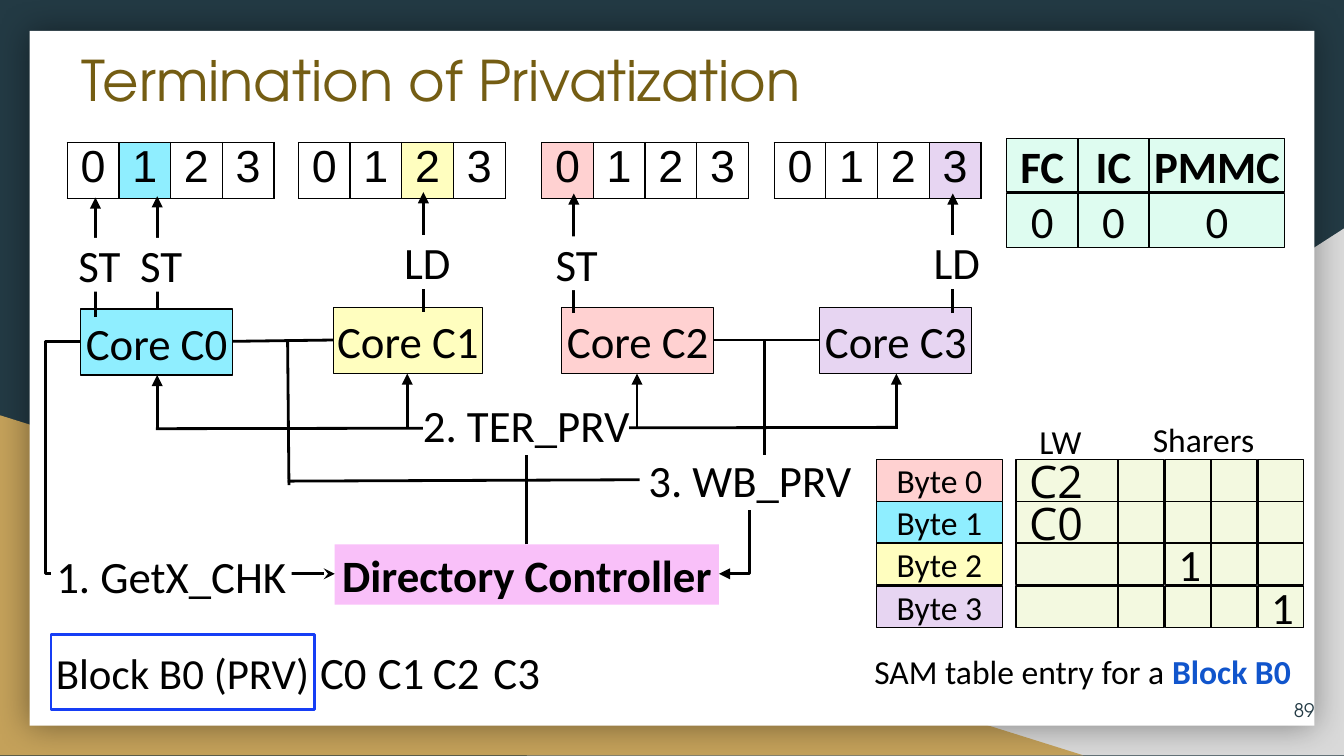
from dataclasses import dataclass

from lxml import etree
from pptx import Presentation
from pptx import util as u
from pptx.dml.color import RGBColor
from pptx.enum import shapes, text
from pptx.oxml.ns import qn


@dataclass(frozen=True)
class Theme:
    background: str = "233A44"
    gray: str = "D9D9D9"
    gold: str = "C4A15A"
    white: str = "FFFFFF"
    black: str = "000000"
    title: str = "745D13"
    pink: str = "FFD1D1"
    cyan: str = "8FEEFF"
    yellow: str = "FFFEBF"
    lilac: str = "E7D5F2"
    magenta: str = "F9C0F9"
    mint: str = "DEFCF0"
    lime: str = "F3F9E0"
    blue: str = "163EF5"
    link: str = "1155CC"
    heading_font: str = "TeX Gyre Adventor"
    body_font: str = "Calibri"
    strip_font: str = "Arial"
    entry_font: str = "Open Sans"
    title_size: int = 30
    body_size: int = 24
    block_size: int = 23
    small_size: int = 18
    number_size: int = 10
    thin: float = 0.75
    thick: float = 1.5


THEME = Theme()
ALIGN = text.PP_ALIGN
ANCHOR = text.MSO_ANCHOR
SHAPE = shapes.MSO_SHAPE


def add_xml(parent, tag, **attributes):
    return etree.SubElement(parent, qn(tag), attributes)


def write(paragraph, content, align=ALIGN.CENTER, spacing=None, **font_format):
    """Fill a paragraph; content is a string or a list of (text, font overrides)."""
    paragraph.alignment = align
    if spacing:
        paragraph.line_spacing = spacing
    runs = [(content, {})] if isinstance(content, str) else content
    for words, overrides in runs:
        style = {**font_format, **overrides}
        run = paragraph.add_run()
        run.text = words
        run.font.size = u.Pt(style.get("size", THEME.body_size))
        run.font.bold = style.get("bold", False)
        run.font.color.rgb = RGBColor.from_string(style.get("color", THEME.black))
        run.font.name = style.get("font", THEME.body_font)
        if "highlight" in style:
            highlight = etree.Element(qn("a:highlight"))
            add_xml(highlight, "a:srgbClr", val=style["highlight"])
            run.font._element.find(qn("a:solidFill")).addnext(highlight)


def write_frame(frame, content, anchor=ANCHOR.MIDDLE, insets=(0, 0), **text_format):
    frame.word_wrap = True
    frame.auto_size = text.MSO_AUTO_SIZE.NONE
    frame.vertical_anchor = anchor
    frame.margin_left = frame.margin_right = u.Inches(insets[0])
    frame.margin_top = frame.margin_bottom = u.Inches(insets[1])
    write(frame.paragraphs[0], content, **text_format)


class DiagramSlide:
    def __init__(self, slide, theme):
        self.slide = slide
        self.theme = theme
        fill = slide.background.fill
        fill.solid()
        fill.fore_color.rgb = RGBColor.from_string(theme.background)

    def title(self, words, *place):
        """Write the title and bring it in front of the shapes drawn so far."""
        shape = self.slide.shapes.title
        shape.left, shape.top, shape.width, shape.height = map(u.Inches, place)
        self.slide.shapes._spTree.append(shape._element)
        write_frame(shape.text_frame, words, ANCHOR.TOP, (0.1, 0.1), align=ALIGN.LEFT,
                    size=self.theme.title_size, font=self.theme.heading_font,
                    color=self.theme.title)

    def box(self, words, *place, fill=None, line=None, width=THEME.thin,
            kind=SHAPE.RECTANGLE, **text_format):
        shape = self.slide.shapes.add_shape(kind, *map(u.Inches, place))
        shape.shadow.inherit = False
        if fill:
            shape.fill.solid()
            shape.fill.fore_color.rgb = RGBColor.from_string(fill)
        else:
            shape.fill.background()
        if line:
            shape.line.color.rgb = RGBColor.from_string(line)
            shape.line.width = u.Pt(width)
        else:
            shape.line.fill.background()
        if words:
            write_frame(shape.text_frame, words, **text_format)
        return shape

    def label(self, words, *place, **text_format):
        shape = self.slide.shapes.add_textbox(*map(u.Inches, place))
        write_frame(shape.text_frame, words, **text_format)

    def line(self, *ends, head=None, tail=None, bend=None):
        """Draw a connector; bend places the elbow as a percentage of its width."""
        kind = shapes.MSO_CONNECTOR.STRAIGHT if bend is None else shapes.MSO_CONNECTOR.ELBOW
        connector = self.slide.shapes.add_connector(kind, *map(u.Inches, ends))
        connector.line.color.rgb = RGBColor.from_string(self.theme.black)
        connector.line.width = u.Pt(self.theme.thick)
        properties = connector._element.spPr
        if bend is not None:
            adjustments = properties.find(qn("a:prstGeom")).find(qn("a:avLst"))
            add_xml(adjustments, "a:gd", name="adj1", fmla=f"val {round(bend * 1000)}")
        outline = properties.find(qn("a:ln"))
        for tag, arrow in (("a:headEnd", head), ("a:tailEnd", tail)):
            if arrow:
                add_xml(outline, tag, type=arrow)
        add_xml(properties, "a:effectLst")

    def byte_strip(self, left, marked, color):
        """Draw a four-byte cache block with one byte coloured."""
        place = map(u.Inches, (left, 1.06, 1.54, 0.42))
        table = self.slide.shapes.add_table(1, 4, *place).table
        table.first_row = table.horz_banding = False
        for index, cell in enumerate(table.rows[0].cells):
            cell.margin_left = cell.margin_right = cell.margin_top = cell.margin_bottom = 0
            write(cell.text_frame.paragraphs[0], str(index), font=self.theme.strip_font)
            properties = cell._tc.get_or_add_tcPr()
            for side in "LRTB":
                border = add_xml(properties, f"a:ln{side}", w=str(u.Pt(self.theme.thin)))
                add_xml(add_xml(border, "a:solidFill"), "a:srgbClr", val=self.theme.black)
            cell.fill.solid()
            cell.fill.fore_color.rgb = RGBColor.from_string(
                color if index == marked else self.theme.white)


def draw_backdrop(d, t):
    right_corner = d.box("", 3.92, 1.7, 6.08, 3.92, fill=t.gray, kind=SHAPE.RIGHT_TRIANGLE)
    right_corner._element.spPr.find(qn("a:xfrm")).set("flipH", "1")
    d.box("", 0, 3.09, 8.06, 2.53, fill=t.gold, kind=SHAPE.RIGHT_TRIANGLE)
    panel = d.box("", 0.22, 0.23, 9.56, 5.17, fill=t.white)
    effects = panel._element.spPr.find(qn("a:effectLst"))
    shadow = add_xml(effects, "a:outerShdw", blurRad=str(u.Pt(18)), dist="0", algn="ctr")
    add_xml(add_xml(shadow, "a:srgbClr", val=t.black), "a:alpha", val="40000")
    d.label("89", 9.51, 5.16, 0.27, 0.25, align=ALIGN.RIGHT, size=t.number_size,
            font=t.heading_font, color=t.background)


def draw_cores(d, t):
    cores = [(0.6, 2.3, 1.13, t.cyan, 0.5, 1), (2.48, 2.29, 1.11, t.yellow, 2.22, 2),
             (4.18, 2.29, 1.13, t.pink, 4.03, 0), (6.1, 2.29, 1.13, t.lilac, 5.76, 3)]
    for index, (left, top, width, color, strip_left, marked) in enumerate(cores):
        d.byte_strip(strip_left, marked, color)
        d.box(f"Core C{index}", left, top, width, 0.49, fill=color, line=t.black)
    accesses = [("ST", 1.17, 2.3, 1.46, 1.01, 1.77), ("ST", 0.71, 2.36, 1.47, 0.55, 1.77),
                ("LD", 3.15, 2.32, 1.43, 2.99, 1.75), ("ST", 4.27, 2.33, 1.44, 4.1, 1.76),
                ("LD", 7.09, 2.33, 1.44, 6.93, 1.75)]
    for name, x, start, tip, left, top in accesses:
        d.line(x, start, x, tip, tail="triangle")
        d.box(name, left, top, 0.38, 0.4, fill=t.white, anchor=ANCHOR.TOP)


def draw_messages(d, t):
    d.box("Directory Controller", 2.49, 4.05, 2.86, 0.45, fill=t.magenta, bold=True)
    d.line(0.6, 2.54, 2.49, 4.27, tail="stealth", bend=-13.8)
    d.box("1. GetX_CHK", 0.38, 4.08, 1.79, 0.4, fill=t.white, anchor=ANCHOR.TOP)
    d.line(3.92, 4.05, 3.92, 3.36)
    d.line(1.16, 3.19, 6.67, 3.18)
    for x, tip in ((1.17, 2.79), (3.03, 2.78), (4.74, 2.78), (6.67, 2.78)):
        d.line(x, 3.19, x, tip, tail="triangle")
    for ends in ((2.14, 3.58, 4.76, 3.57), (1.73, 2.54, 2.48, 2.53), (5.31, 2.53, 6.1, 2.53),
                 (2.14, 2.53, 2.15, 3.61), (5.69, 2.54, 5.69, 3.45)):
        d.line(*ends)
    d.line(5.35, 4.27, 5.58, 3.78, head="triangle", bend=100)
    for words, left, top, width in (("2. TER_PRV", 3.02, 2.96, 1.79),
                                    ("3. WB_PRV", 4.76, 3.37, 1.64)):
        d.label(words, left, top, width, 0.4, anchor=ANCHOR.TOP, highlight=t.white)


def draw_block_state(d, t):
    d.box("Block B0 (PRV)", 0.38, 4.72, 1.96, 0.56, line=t.blue, width=t.thick,
          insets=(0, 0.1), size=t.block_size)
    for index, left in enumerate((2.34, 2.77, 3.18, 3.63)):
        d.label(f"C{index}", left, 4.72, 0.43, 0.56, insets=(0, 0.1))


def draw_counters(d, t):
    for name, left, width in (("FC", 7.49, 0.53), ("IC", 8.02, 0.53), ("PMMC", 8.55, 1.01)):
        for words, top in ((name, 1.03), ("0", 1.44)):
            d.box(words, left, top, width, 0.4, fill=t.mint, line=t.black, bold=words == name)


def draw_sam_table(d, t):
    columns = [(7.56, 0.76)] + [(left, 0.34) for left in (8.32, 8.67, 9.01, 9.36)]
    rows = [(3.42, t.pink), (3.73, t.cyan), (4.04, t.yellow), (4.36, t.lilac)]
    entries = {(0, 0): "C2", (1, 0): "C0", (2, 2): "1", (3, 4): "1"}
    for row, (top, color) in enumerate(rows):
        d.box(f"Byte {row}", 6.52, top, 0.94, 0.31, fill=color, line=t.black,
              insets=(0.1, 0.1), size=t.small_size)
        for column, (left, width) in enumerate(columns):
            d.box(entries.get((row, column)), left, top, width, 0.31, fill=t.lime, line=t.black,
                  align=ALIGN.JUSTIFY, insets=(0.1, 0.1),
                  font=t.body_font if column else t.entry_font)
    for words, left, top, width in (("LW", 7.63, 3.24, 0.52), ("Sharers", 8.45, 3.22, 1.01)):
        d.label(words, left, top, width, 0.18, insets=(0.1, 0), spacing=0.6, size=t.small_size)
    d.label([("SAM table entry for a ", {}), ("Block B0", {"color": t.link, "bold": True})],
            6.33, 4.74, 3.45, 0.5, insets=(0.1, 0.1), size=t.small_size)


def main():
    presentation = Presentation()
    presentation.slide_width = u.Inches(10)
    presentation.slide_height = presentation.slide_width * 9 // 16
    diagram = DiagramSlide(presentation.slides.add_slide(presentation.slide_layouts[5]), THEME)
    draw_backdrop(diagram, THEME)
    diagram.title("Termination of Privatization", 0.51, 0.24, 6.19, 0.71)
    for draw in (draw_cores, draw_messages, draw_block_state, draw_counters, draw_sam_table):
        draw(diagram, THEME)
    presentation.save("out.pptx")


if __name__ == "__main__":
    main()
